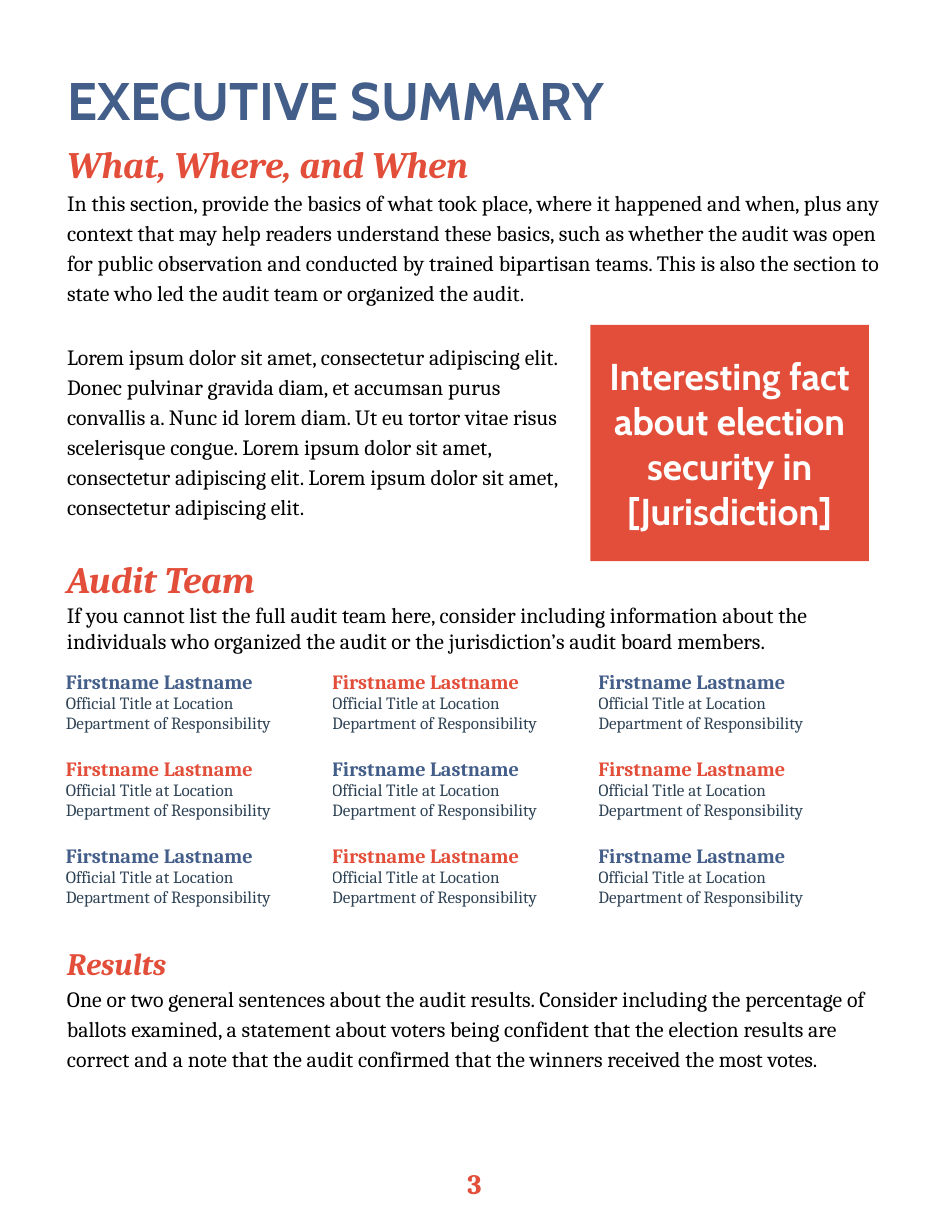
from lxml import etree
from pptx import Presentation
from pptx.dml.color import RGBColor
from pptx.enum.shapes import MSO_SHAPE
from pptx.enum.text import MSO_ANCHOR, MSO_AUTO_SIZE, PP_ALIGN
from pptx.oxml.ns import qn
from pptx.util import Pt

LEFT, CENTER = PP_ALIGN.LEFT, PP_ALIGN.CENTER
TOP, MIDDLE = MSO_ANCHOR.TOP, MSO_ANCHOR.MIDDLE
NO_FIT = MSO_AUTO_SIZE.NONE
ROUND = MSO_SHAPE.ROUNDED_RECTANGLE

HEX = {"blue": "445E8A", "red": "E24E39", "slate": "2E4355",
       "black": "000000", "white": "FFFFFF"}
SERIF, SANS = "Cambria", "Cabin"

WHAT = ("In this section, provide the basics of what took place, where it "
        "happened and when, plus any context that may help readers understand "
        "these basics, such as whether the audit was open for public "
        "observation and conducted by trained bipartisan teams. This is also "
        "the section to state who led the audit team or organized the audit.")
LOREM = ("Lorem ipsum dolor sit amet, consectetur adipiscing elit. Donec "
         "pulvinar gravida diam, et accumsan purus convallis a. Nunc id lorem "
         "diam. Ut eu tortor vitae risus scelerisque congue. Lorem ipsum dolor "
         "sit amet, consectetur adipiscing elit. Lorem ipsum dolor sit amet, "
         "consectetur adipiscing elit.")
TEAM = ("If you cannot list the full audit team here, consider including "
        "information about the individuals who organized the audit or the "
        "jurisdiction’s audit board members.")
RESULTS = ("One or two general sentences about the audit results. Consider "
           "including the percentage of ballots examined, a statement about "
           "voters being confident that the election results are correct and "
           "a note that the audit confirmed that the winners received the "
           "most votes.")
FACT = "Interesting fact about election security in [Jurisdiction]"
NAME = "Firstname Lastname"
ROLE = ["Official Title at Location", "Department of Responsibility"]


def write(par, text, size=14, font=SERIF, color="black", bold=False,
          italic=False, align=LEFT, lead=1, after=0):
    """Add one formatted run to a paragraph."""
    par.alignment, par.line_spacing = align, lead
    par.space_before, par.space_after = Pt(0), Pt(after)
    run = par.add_run()
    run.text = text
    face = run.font
    face.size, face.name = Pt(size), font
    face.bold, face.italic = bold, italic
    face.color.rgb = RGBColor.from_string(HEX[color])


def set_frame(shape, side=7.2, edge=7.2, anchor=TOP):
    frame = shape.text_frame
    frame.word_wrap, frame.auto_size = True, NO_FIT
    frame.vertical_anchor = anchor
    frame.margin_left = frame.margin_right = Pt(side)
    frame.margin_top = frame.margin_bottom = Pt(edge)
    return frame


def place(shape, left, top, width, height):
    shape.left, shape.top = Pt(left), Pt(top)
    shape.width, shape.height = Pt(width), Pt(height)


def add_box(slide, left, top, width, height, **margins):
    box = slide.shapes.add_textbox(Pt(left), Pt(top), Pt(width), Pt(height))
    return set_frame(box, **margins)


def fill_section(frame, head, body, size=24, **style):
    """Write a red heading and the paragraph below it."""
    write(frame.paragraphs[0], head, size=size, color="red",
          bold=True, italic=True)
    write(frame.add_paragraph(), body, **style)


def drop_bullets(frame):
    for par in frame.paragraphs:
        props = par._p.get_or_add_pPr()
        props.set("marL", "0")
        props.set("indent", "0")
        etree.SubElement(props, qn("a:buNone"))


def add_fact(slide):
    card = slide.shapes.add_shape(ROUND, Pt(379.5), Pt(208.8),
                                  Pt(179), Pt(152))
    card.adjustments[0] = 0
    card.shadow.inherit = False
    card.fill.solid()
    card.fill.fore_color.rgb = RGBColor.from_string(HEX["red"])
    card.line.fill.background()
    frame = set_frame(card, side=10.8, edge=10.8, anchor=MIDDLE)
    write(frame.paragraphs[0], FACT, size=24, font=SANS, color="white",
          bold=True, align=CENTER)


def fill_cell(cell, color):
    cell.fill.background()
    cell.margin_left = cell.margin_top = Pt(0)
    cell.margin_right = cell.margin_bottom = Pt(7.2)
    par = cell.text_frame.paragraphs[0]
    write(par, NAME, size=13, color=color, bold=True)
    for line in ROLE:
        par.add_line_break()
        write(par, line, size=11, color="slate")


def add_team(slide):
    count = 3
    table = slide.shapes.add_table(count, count, Pt(42.3), Pt(431.3),
                                   Pt(513.6), Pt(168)).table
    table.first_row = table.horz_banding = False
    for row in range(count):
        for col in range(count):
            color = "red" if (row + col) % 2 else "blue"
            fill_cell(table.cell(row, col), color)


def main():
    deck = Presentation()
    deck.slide_width, deck.slide_height = Pt(612), Pt(792)
    slide = deck.slides.add_slide(deck.slide_layouts[1])
    title, body = slide.placeholders

    place(title, 36, 36, 540, 47.5)
    write(set_frame(title).paragraphs[0], "EXECUTIVE SUMMARY", size=34,
          font=SANS, color="blue", bold=True)

    place(body, 36, 83.5, 540, 134)
    frame = set_frame(body)
    fill_section(frame, "What, Where, and When", WHAT, lead=1.15, after=12)
    drop_bullets(frame)

    add_team(slide)
    lorem = add_box(slide, 36, 211, 337.7, 151)
    write(lorem.paragraphs[0], LOREM, lead=1.15)
    fill_section(add_box(slide, 36, 599.8, 540, 129), "Results", RESULTS,
                 size=20, lead=1.15, after=12)
    add_fact(slide)
    page = add_box(slide, -2, 743, 614, 25)
    write(page.paragraphs[0], "3", size=18, color="red", bold=True,
          align=CENTER)
    fill_section(add_box(slide, 36, 354.2, 522.7, 87, edge=3.6),
                 "Audit Team", TEAM)
    deck.save("out.pptx")


if __name__ == "__main__":
    main()
